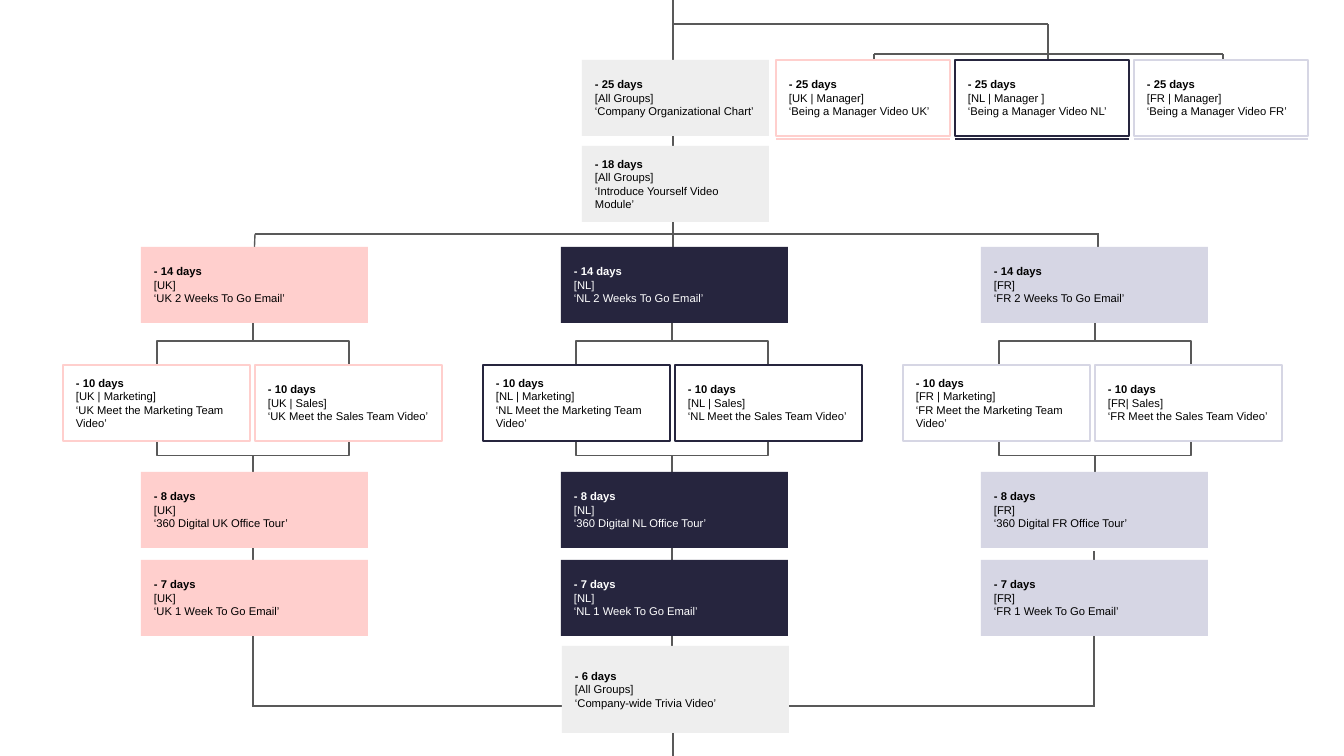
"""Build an onboarding timeline flow chart for three country branches."""
from lxml import etree
from pptx import Presentation
from pptx.dml.color import RGBColor
from pptx.enum.shapes import MSO_CONNECTOR, MSO_SHAPE
from pptx.enum.text import MSO_ANCHOR, PP_ALIGN
from pptx.oxml.ns import qn
from pptx.util import Pt

STRAIGHT, ELBOW = MSO_CONNECTOR.STRAIGHT, MSO_CONNECTOR.ELBOW
RECT = MSO_SHAPE.RECTANGLE
MIDDLE = MSO_ANCHOR.MIDDLE
LEFT = PP_ALIGN.LEFT

SCALE = 914400 / 134.4
BLACK = RGBColor(0x00, 0x00, 0x00)
WHITE = RGBColor(0xFF, 0xFF, 0xFF)
RULE = RGBColor(0x59, 0x59, 0x59)
GREY = RGBColor(0xEE, 0xEE, 0xEE)
PINK = RGBColor(0xFF, 0xCF, 0xCD)
NAVY = RGBColor(0x26, 0x25, 0x3E)
LILAC = RGBColor(0xD6, 0xD6, 0xE4)

HIGH = 76
WIDE, HALF, SLIM = 227, 187, 174

BRANCHES = [
    ("UK", PINK, BLACK, 253, "[UK | Sales]", "[UK | Manager]"),
    ("NL", NAVY, WHITE, 672, "[NL | Sales]", "[NL | Manager ]"),
    ("FR", LILAC, BLACK, 1095, "[FR| Sales]", "[FR | Manager]"),
]
LINES = [
    (673, 247, 673, 0), (672, 24, 1048, 24), (1048, 128, 1048, 24),
    (1223, 54, 874, 54), (874, 128, 874, 54), (1223, 128, 1223, 54),
    (255, 234, 1099, 234), (255, 234, 254, 259), (1098, 234, 1098, 259),
    (672, 535, 672, 571), (672, 629, 672, 665), (673, 732, 673, 756),
    (253, 531, 253, 706), (1094, 551, 1094, 706), (252, 706, 1095, 706),
]


def px(size):
    """Turn pixels into EMU."""
    return round(size * SCALE)


def link(slide, kind, ends, color=RULE):
    """Draw a thin connector between two points."""
    wire = slide.shapes.add_connector(kind, *map(px, ends))
    wire.line.color.rgb = color
    wire.line.width = Pt(0.75)
    etree.SubElement(wire._element.spPr, qn("a:effectLst"))
    return wire


def fork(slide, x1, y1, x2, y2, bend):
    """Draw an elbow that leaves and arrives vertically."""
    left, down = x2 < x1, y2 > y1
    mid_x, mid_y = (x1 + x2) / 2, (y1 + y2) / 2
    half_w, half_h = abs(y2 - y1) / 2, abs(x2 - x1) / 2
    if left != down:
        half_w = -half_w
    wire = link(slide, ELBOW, (mid_x - half_w, mid_y - half_h,
                               mid_x + half_w, mid_y + half_h))
    props = wire._element.spPr
    props.find(qn("a:xfrm")).set("rot", str((90 if left else 270) * 60000))
    guides = props.find(qn("a:prstGeom")).find(qn("a:avLst"))
    etree.SubElement(guides, qn("a:gd"), name="adj1",
                     fmla=f"val {round(bend * 100000)}")


def card(slide, box, texts, fill, ink=BLACK, edge=None):
    """Add a box whose first line is bold."""
    shape = slide.shapes.add_shape(RECT, *map(px, box))
    shape.shadow.inherit = False
    shape.fill.solid()
    shape.fill.fore_color.rgb = fill
    if edge is None:
        shape.line.fill.background()
    else:
        shape.line.color.rgb = edge
        shape.line.width = Pt(0.75)
    frame = shape.text_frame
    frame.word_wrap = True
    frame.vertical_anchor = MIDDLE
    frame.margin_left = frame.margin_right = px(13)
    frame.margin_top = frame.margin_bottom = px(13)
    for row, text in enumerate(texts):
        para = frame.add_paragraph() if row else frame.paragraphs[0]
        para.text = text
        para.alignment = LEFT
        para.font.name = "Arial"
        para.font.size = Pt(6)
        para.font.bold = row == 0
        para.font.color.rgb = ink


def wires(slide):
    """Draw every connector behind the boxes."""
    for ends in LINES:
        link(slide, STRAIGHT, ends)
    for branch in BRANCHES:
        mid = branch[3]
        for side in (mid - 96, mid + 96):
            fork(slide, mid, 317, side, 365, 0.5)
            fork(slide, mid, 518, side, 423, 0.66)


def shared(slide):
    """Add the steps that all groups take."""
    steps = [
        (582, 60, HALF, HIGH, "- 25 days", "‘Company Organizational Chart’"),
        (582, 146, HALF, HIGH, "- 18 days",
         "‘Introduce Yourself Video Module’"),
        (562, 646, WIDE, 87, "- 6 days", "‘Company-wide Trivia Video’"),
    ]
    for *box, days, title in steps:
        card(slide, box, (days, "[All Groups]", title), GREY)


def branch(slide, col, code, hue, ink, sales, boss):
    """Add the steps of one country and its manager video."""
    left = 141 + 420 * col
    steps = [
        (247, "- 14 days", f"‘{code} 2 Weeks To Go Email’"),
        (472, "- 8 days", f"‘360 Digital {code} Office Tour’"),
        (560, "- 7 days", f"‘{code} 1 Week To Go Email’"),
    ]
    for top, days, title in steps:
        card(slide, (left, top, WIDE, HIGH), (days, f"[{code}]", title),
             hue, ink)
    teams = [("Marketing", f"[{code} | Marketing]"), ("Sales", sales)]
    for pos, (team, group) in enumerate(teams):
        card(slide, (left - 78 + 192 * pos, 365, HALF, HIGH),
             ("- 10 days", group, f"‘{code} Meet the {team} Team Video’"),
             WHITE, edge=hue)
    start = 776 + 179 * col
    card(slide, (start, 60, SLIM, HIGH),
         ("- 25 days", boss, f"‘Being a Manager Video {code}’"),
         WHITE, edge=hue)
    link(slide, STRAIGHT, (start + SLIM, 139, start, 139), hue)


def main():
    """Build and save the slide."""
    deck = Presentation()
    deck.slide_width, deck.slide_height = px(1344), px(756)
    slide = deck.slides.add_slide(deck.slide_layouts[6])
    wires(slide)
    shared(slide)
    for col, (code, hue, ink, _, sales, boss) in enumerate(BRANCHES):
        branch(slide, col, code, hue, ink, sales, boss)
    deck.save("out.pptx")


if __name__ == "__main__":
    main()
